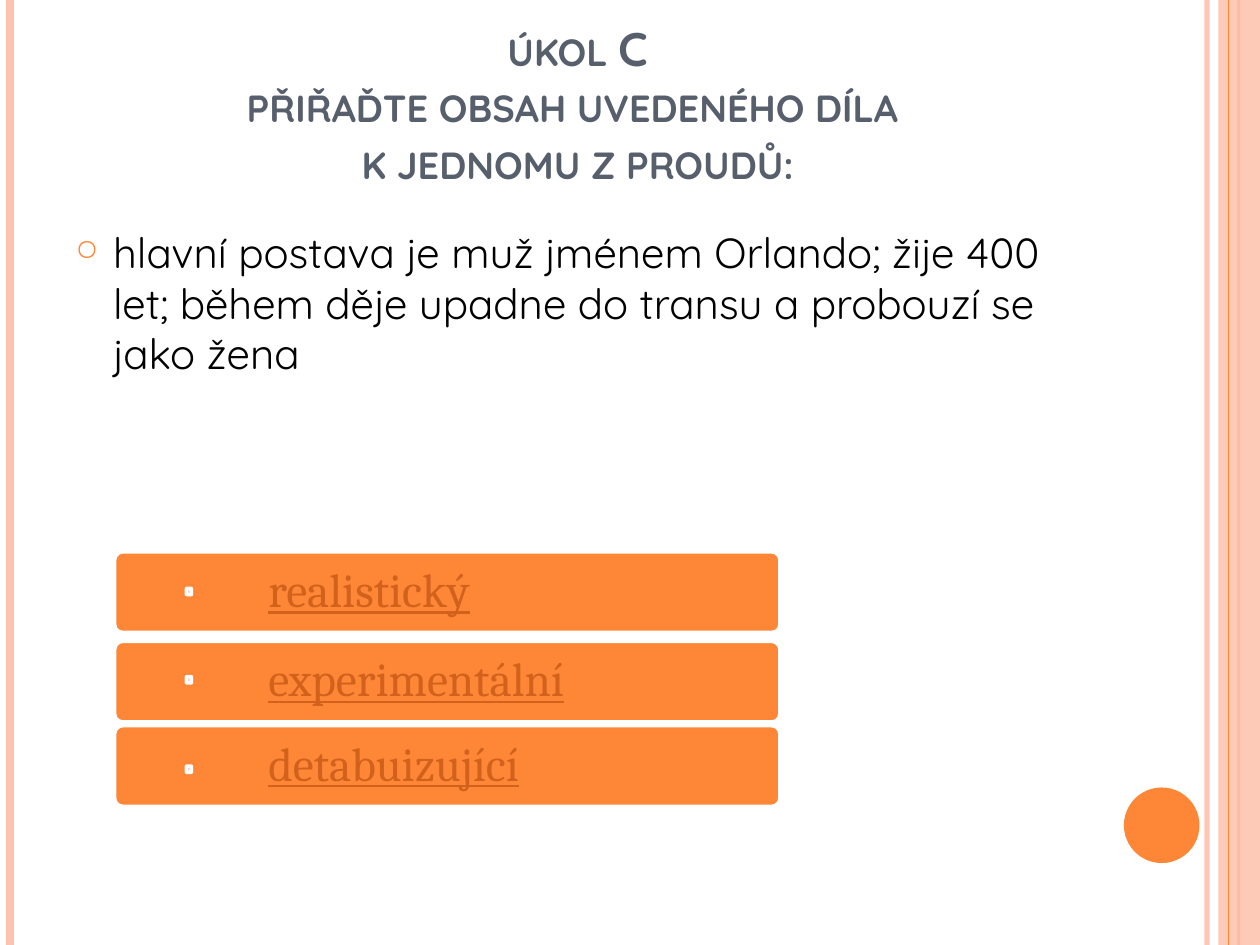
import dataclasses

import lxml.etree
import pptx
import pptx.dml.color
import pptx.enum.shapes
import pptx.enum.text
import pptx.oxml.ns
import pptx.util

Inches = pptx.util.Inches
Pt = pptx.util.Pt
SHAPE = pptx.enum.shapes.MSO_SHAPE
ALIGN = pptx.enum.text.PP_ALIGN
ANCHOR = pptx.enum.text.MSO_ANCHOR
qn = pptx.oxml.ns.qn


def rgb(value):
    return pptx.dml.color.RGBColor.from_string(value)


@dataclasses.dataclass(frozen=True)
class Theme:
    accent: str = "FE8637"
    pale: str = "FEC3AE"
    marker: str = "FFCEBF"
    white: str = "FFFFFF"
    title: str = "575F6D"
    text: str = "000000"
    link: str = "D2611C"
    heading_font: str = "Quicksand"
    option_font: str = "Cambria"
    large: int = 27
    body: int = 24


class SlideBuilder:
    def __init__(self, prs, theme):
        self.theme = theme
        self.slide = prs.slides.add_slide(prs.slide_layouts[6])

    def set_alpha(self, element, percent):
        color = next(element.iter(qn("a:srgbClr")))
        lxml.etree.SubElement(color, qn("a:alpha"), val=str(percent * 1000))

    def rule(self, x, color, width, alpha=100):
        line = self.slide.shapes.add_connector(
            pptx.enum.shapes.MSO_CONNECTOR.STRAIGHT,
            Inches(x), Inches(0), Inches(x), Inches(7.5))
        line.line.color.rgb = rgb(color)
        line.line.width = Pt(width)
        sp_pr = line._element.spPr
        lxml.etree.SubElement(sp_pr, qn("a:effectLst"))
        if alpha < 100:
            self.set_alpha(sp_pr, alpha)

    def shape(self, kind, box, fill, outline=None, alpha=100, corner=None):
        sp = self.slide.shapes.add_shape(kind, *map(Inches, box))
        sp.shadow.inherit = False
        sp.fill.solid()
        sp.fill.fore_color.rgb = rgb(fill)
        if alpha < 100:
            self.set_alpha(sp._element.spPr, alpha)
        if outline:
            sp.line.color.rgb = rgb(outline)
            sp.line.width = Pt(2)
        else:
            sp.line.fill.background()
        if corner is not None:
            sp.adjustments[0] = corner

    def text(self, box, text, color, font, frame=None, para=None):
        sp = self.slide.shapes.add_textbox(*map(Inches, box))
        tf = sp.text_frame
        tf.word_wrap = True
        p = tf.paragraphs[0]
        p.text = text
        for target, formats in ((tf, frame), (p, para)):
            for name, value in (formats or {}).items():
                setattr(target, name, value)
        for r in p.runs:
            for name, value in font.items():
                setattr(r.font, name, value)
            r.font.color.rgb = rgb(color)
        return p

    def title(self, box, text):
        p = self.text(
            box, text, self.theme.title,
            {"name": self.theme.heading_font, "size": Pt(self.theme.large), "bold": True},
            {"vertical_anchor": ANCHOR.BOTTOM}, {"alignment": ALIGN.CENTER})
        for r in p.runs:
            r.font._element.set("cap", "small")

    def bullet(self, box, text):
        p = self.text(
            box, text, self.theme.text,
            {"name": self.theme.heading_font, "size": Pt(self.theme.body)},
            para={"space_before": Pt(6)})
        p_pr = p._p.get_or_add_pPr()
        p_pr.set("marL", str(Inches(0.3)))
        p_pr.set("indent", str(Inches(-0.3)))
        bullet_color = lxml.etree.SubElement(p_pr, qn("a:buClr"))
        lxml.etree.SubElement(bullet_color, qn("a:srgbClr"), val=self.theme.accent)
        lxml.etree.SubElement(p_pr, qn("a:buSzPct"), val="70000")
        lxml.etree.SubElement(p_pr, qn("a:buChar"), char="○")

    def option(self, top, marker_top, text):
        theme = self.theme
        inset = Inches(0.11)
        self.shape(SHAPE.ROUNDED_RECTANGLE, (0.91, top, 5.28, 0.64),
                   theme.accent, theme.white, corner=0.1)
        self.text(
            (2.02, top, 4.16, 0.64), text, theme.link,
            {"name": theme.option_font, "size": Pt(theme.large), "underline": True},
            {"vertical_anchor": ANCHOR.MIDDLE, "margin_left": inset,
             "margin_right": inset, "margin_top": inset, "margin_bottom": inset},
            {"line_spacing": 0.9})
        self.shape(SHAPE.ROUNDED_RECTANGLE, (1.48, marker_top, 0.04, 0.05),
                   theme.marker, theme.white, corner=0.1)


def main():
    prs = pptx.Presentation()
    prs.slide_width = Inches(10)
    prs.slide_height = Inches(7.5)
    theme = Theme()
    s = SlideBuilder(prs, theme)

    s.rule(9.58, theme.pale, 3, alpha=93)
    s.rule(0.08, theme.pale, 4.5)
    s.rule(9.83, theme.accent, 1.5)
    s.shape(SHAPE.RECTANGLE, (9.67, 0, 0.33, 7.5), theme.pale, alpha=87)
    s.rule(9.75, theme.accent, 0.75)
    s.shape(SHAPE.OVAL, (8.92, 6.25, 0.6, 0.6), theme.accent)

    s.title((0.5, 0.3, 8.17, 1.25),
            "úkol C\vpřiřaďte obsah uvedeného díla \vk jednomu z proudů:")
    s.bullet((0.5, 1.75, 8.17, 5.33),
             "hlavní postava je muž jménem Orlando; žije 400 let; "
             "během děje upadne do transu a probouzí se jako žena")

    for top, marker_top, text in (
        (4.38, 4.67, "realistický"),
        (5.09, 5.37, "experimentální"),
        (5.76, 6.08, "detabuizující"),
    ):
        s.option(top, marker_top, text)

    prs.save("out.pptx")


if __name__ == "__main__":
    main()
